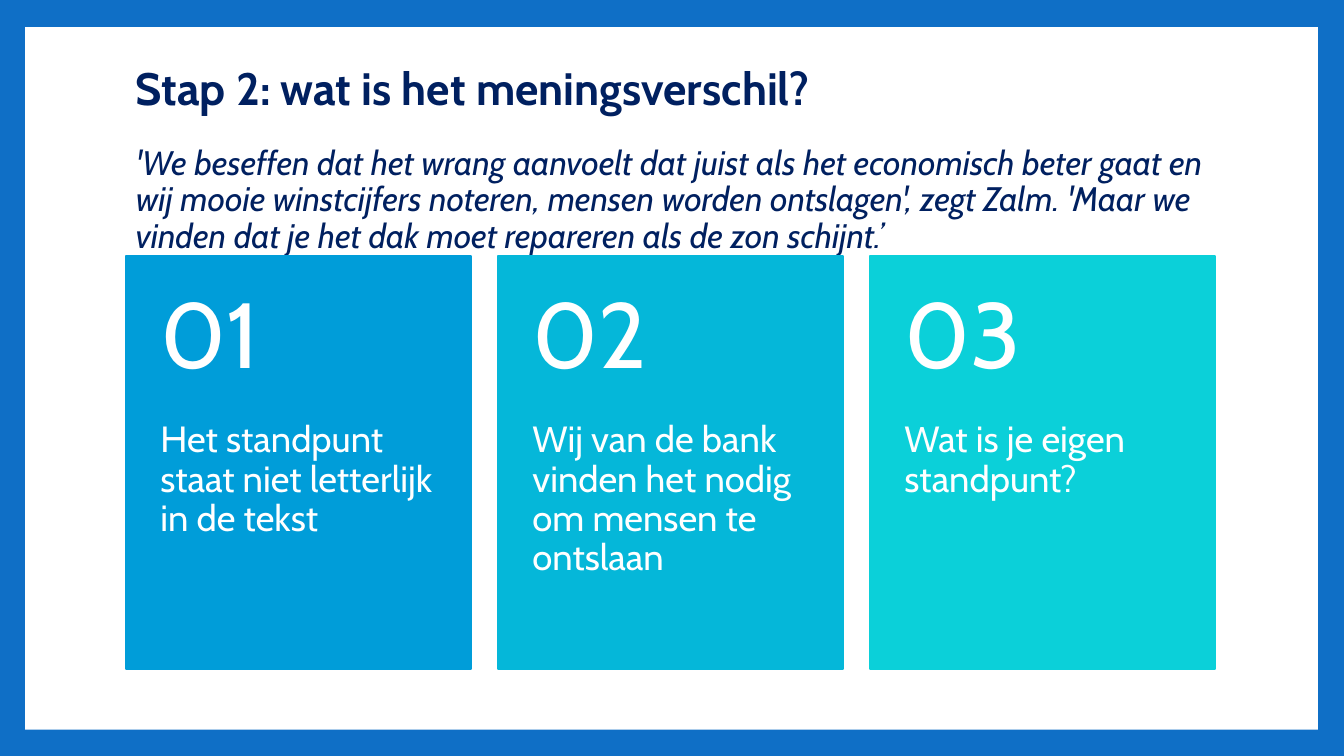
from dataclasses import dataclass

from pptx import Presentation
from pptx.dml.color import RGBColor
from pptx.enum.shapes import MSO_SHAPE as Shape
from pptx.enum.text import MSO_ANCHOR as Anchor
from pptx.slide import Slide
from pptx.util import Emu, Pt

EMU_PER_PX = 9144


@dataclass(frozen=True)
class Theme:
    font: str = "Cabin"
    frame: str = "0F6FC6"
    paper: str = "FFFFFF"
    ink: str = "002060"
    card_text: str = "FFFFFF"
    title_size: float = 32.4
    quote_size: float = 24.3
    number_size: float = 66
    body_size: float = 26
    line_spacing: float = 0.9
    title_gap: float = 22
    border: float = 1.5


@dataclass(frozen=True)
class Box:
    left: int
    top: int
    width: int
    height: int


@dataclass(frozen=True)
class Insets:
    left: int
    top: int
    right: int
    bottom: int


@dataclass(frozen=True)
class Span:
    text: str
    size: float
    color: str
    bold: bool = False
    italic: bool = False
    gap_after: float = 0


@dataclass(frozen=True)
class Card:
    text: str
    color: str


THEME = Theme()
PAPER = Box(25, 27, 1282, 697)
HEADING = Box(125, 67, 1080, 185)
HEADING_INSETS = Insets(10, 5, 10, 5)
FIRST_CARD = Box(125, 254, 342, 410)
CARD_STEP = 369
NUMBER_HEIGHT = 164
NUMBER_INSETS = Insets(34, 18, 34, 18)
BODY_INSETS = Insets(34, 0, 34, 36)

TITLE = "Stap 2: wat is het meningsverschil?"
QUOTE = (
    "'We beseffen dat het wrang aanvoelt dat juist als het economisch beter gaat en "
    "wij mooie winstcijfers noteren, mensen worden ontslagen', zegt Zalm. "
    "'Maar we vinden dat je het dak moet repareren als de zon schijnt.’"
)
CARDS = [
    Card("Het standpunt staat niet letterlijk in de tekst", "009DD9"),
    Card("Wij van de bank vinden het nodig om mensen te ontslaan", "05B7D9"),
    Card("Wat is je eigen standpunt?", "0BD0D9"),
]


def px(length: int) -> Emu:
    return Emu(length * EMU_PER_PX)


def rgb(color: str) -> RGBColor:
    return RGBColor.from_string(color)


def place(box: Box) -> tuple[Emu, Emu, Emu, Emu]:
    return px(box.left), px(box.top), px(box.width), px(box.height)


def add_panel(page: Slide, box: Box, color: str, border: float = 0) -> None:
    panel = page.shapes.add_shape(Shape.RECTANGLE, *place(box))
    panel.shadow.inherit = False
    panel.fill.solid()
    panel.fill.fore_color.rgb = rgb(color)
    if border:
        panel.line.color.rgb = rgb(color)
        panel.line.width = Pt(border)
    else:
        panel.line.fill.background()


def add_text(page: Slide, box: Box, insets: Insets, anchor: Anchor, spans: list[Span]) -> None:
    frame = page.shapes.add_textbox(*place(box)).text_frame
    frame.word_wrap = True
    frame.vertical_anchor = anchor
    frame.margin_left, frame.margin_top = px(insets.left), px(insets.top)
    frame.margin_right, frame.margin_bottom = px(insets.right), px(insets.bottom)
    frame.text = "\n".join(span.text for span in spans)
    for para, span in zip(frame.paragraphs, spans):
        para.line_spacing = THEME.line_spacing
        para.space_after = Pt(span.gap_after)
        for run in para.runs:
            run.font.name = THEME.font
            run.font.size = Pt(span.size)
            run.font.bold = span.bold
            run.font.italic = span.italic
            run.font.color.rgb = rgb(span.color)


def add_card(page: Slide, index: int, card: Card) -> None:
    left = FIRST_CARD.left + index * CARD_STEP
    top, width, height = FIRST_CARD.top, FIRST_CARD.width, FIRST_CARD.height
    add_panel(page, Box(left, top, width, height), card.color, THEME.border)
    body_box = Box(left, top + NUMBER_HEIGHT, width, height - NUMBER_HEIGHT)
    body = Span(card.text, THEME.body_size, THEME.card_text)
    add_text(page, body_box, BODY_INSETS, Anchor.TOP, [body])
    number = Span(f"{index + 1:02}", THEME.number_size, THEME.card_text)
    number_box = Box(left, top, width, NUMBER_HEIGHT)
    add_text(page, number_box, NUMBER_INSETS, Anchor.MIDDLE, [number])


def main() -> None:
    deck = Presentation()
    deck.slide_width, deck.slide_height = px(1333), px(750)
    page = deck.slides.add_slide(deck.slide_layouts[6])
    page.background.fill.solid()
    page.background.fill.fore_color.rgb = rgb(THEME.frame)
    add_panel(page, PAPER, THEME.paper)
    heading = [
        Span(TITLE, THEME.title_size, THEME.ink, bold=True, gap_after=THEME.title_gap),
        Span(QUOTE, THEME.quote_size, THEME.ink, italic=True),
    ]
    add_text(page, HEADING, HEADING_INSETS, Anchor.MIDDLE, heading)
    for index, card in enumerate(CARDS):
        add_card(page, index, card)
    deck.save("out.pptx")


if __name__ == "__main__":
    main()
